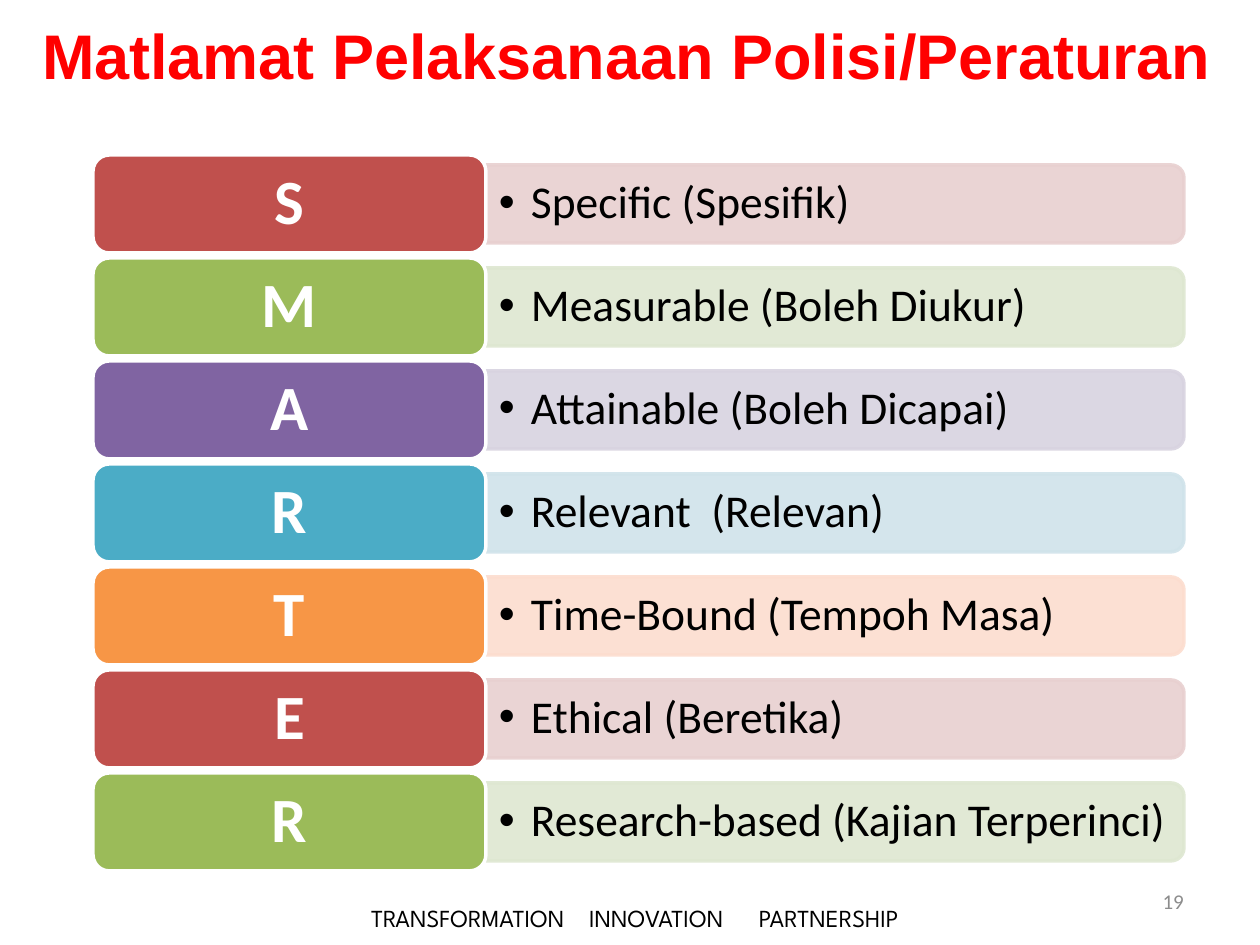
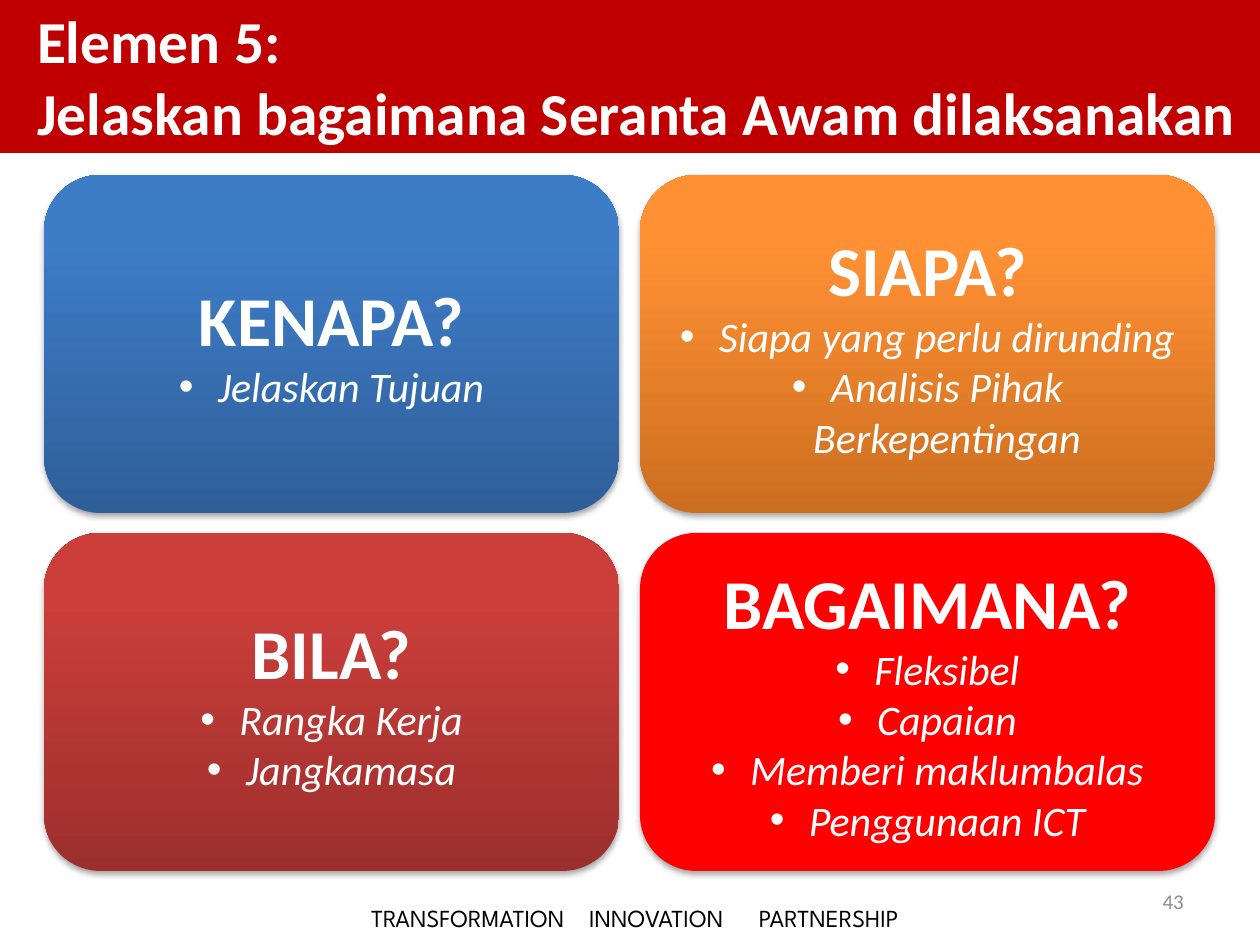
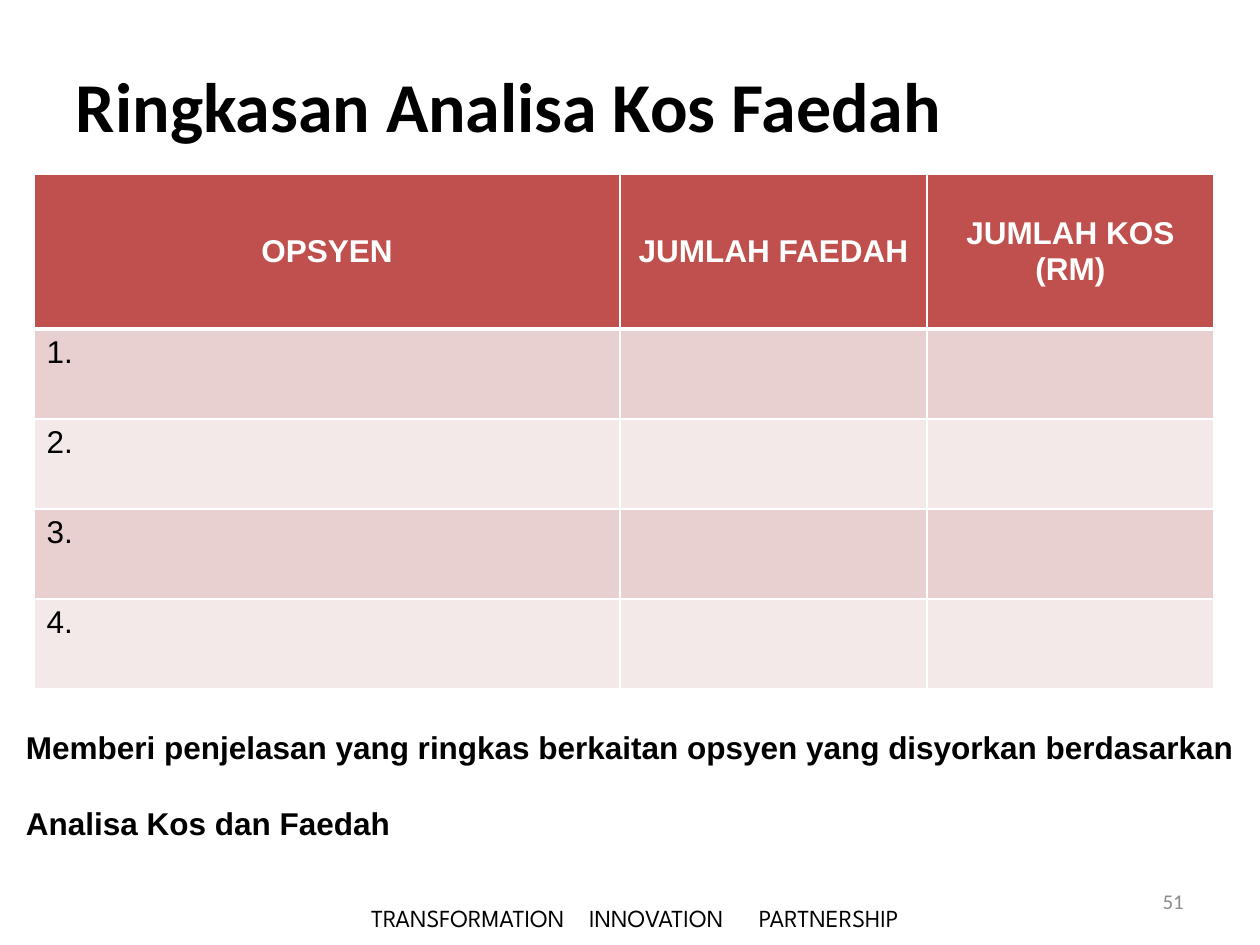
from dataclasses import dataclass

from lxml import etree
from pptx import Presentation
from pptx.dml.color import RGBColor
from pptx.enum import shapes, text
from pptx.oxml import parse_xml
from pptx.oxml.ns import nsdecls, qn
from pptx.util import Emu, Pt

PX = 914400 // 126
TITLE_ONLY = 5
LEFT, CENTER, RIGHT = text.PP_ALIGN.LEFT, text.PP_ALIGN.CENTER, text.PP_ALIGN.RIGHT
TOP, MIDDLE, BOTTOM = (text.MSO_ANCHOR.TOP, text.MSO_ANCHOR.MIDDLE,
                       text.MSO_ANCHOR.BOTTOM)


@dataclass(frozen=True)
class Theme:
    body: str = "Calibri"
    plain: str = "Arial"
    brand: str = "League Spartan"
    black: str = "000000"
    white: str = "FFFFFF"
    gray: str = "8C8C8C"
    red: str = "FF0000"
    band: str = "C00000"
    accents: tuple = ("C0504D", "9BBB59", "8064A2", "4BACC6", "F79646")
    tints: tuple = ("E8D0D0", "DEE7D1", "D8D3E0", "D0E3EA", "FCDDCF")
    table_rows: tuple = ("E8D0D0", "F4E9E9")
    heading: int = 40
    title: int = 36
    band_title: int = 34
    item: int = 26
    card_item: int = 24
    table: int = 18
    footer: int = 14
    number: int = 12


THEME = Theme()

FOOTER = "TRANSFORMATION\tINNOVATION\tPARTNERSHIP"
FOOTER_TABS = (218, 388)

SMART_TITLE = "Matlamat Pelaksanaan Polisi/Peraturan"
SMART = [
    ("S", "Specific (Spesifik)"),
    ("M", "Measurable (Boleh Diukur)"),
    ("A", "Attainable (Boleh Dicapai)"),
    ("R", "Relevant  (Relevan)"),
    ("T", "Time-Bound (Tempoh Masa)"),
    ("E", "Ethical (Beretika)"),
    ("R", "Research-based (Kajian Terperinci)"),
]

CONSULTATION_TITLE = ["Elemen 5:", "Jelaskan bagaimana Seranta Awam dilaksanakan"]
CARDS = [
    ("KENAPA?", ["Jelaskan Tujuan"], ("2F5F99", "3D7CC7")),
    ("SIAPA?", ["Siapa yang perlu dirunding", "Analisis Pihak Berkepentingan"],
     ("CC6E20", "FF9034")),
    ("BILA?", ["Rangka Kerja", "Jangkamasa"], ("9C2F2D", "CB3E3A")),
    ("BAGAIMANA?", ["Fleksibel", "Capaian", "Memberi maklumbalas", "Penggunaan ICT"],
     (THEME.red,)),
]

COST_TITLE = "Ringkasan Analisa Kos Faedah"
COST_HEADER = [["OPSYEN"], ["JUMLAH FAEDAH"], ["JUMLAH KOS", "(RM)"]]
COST_OPTIONS = ["1.", "2.", "3.", "4."]
COST_COLUMNS = (586, 307, 287)
COST_HEADER_HEIGHT, COST_ROW_HEIGHT = 155, 90
COST_NOTE = [
    "Memberi penjelasan yang ringkas berkaitan opsyen yang disyorkan berdasarkan",
    "Analisa Kos dan Faedah",
]


def px(*lengths):
    return [Emu(length * PX) for length in lengths]


def rgb(color):
    return RGBColor.from_string(color)


def write(frame, lines, size, color=THEME.black, font=THEME.body, bold=False,
          italic=False, align=LEFT, spacing=None, gap=0, bullet=0, tabs=()):
    """Append paragraphs; bullet is the hanging indent in px, gap is in points."""
    for line in [lines] if isinstance(lines, str) else lines:
        first = not frame.text
        paragraph = frame.paragraphs[0] if first else frame.add_paragraph()
        properties = paragraph._p.get_or_add_pPr()
        if bullet:
            properties.set("marL", str(bullet * PX))
            properties.set("indent", str(-bullet * PX))
            etree.SubElement(properties, qn("a:buFont"), typeface="Arial")
            etree.SubElement(properties, qn("a:buChar"), char="•")
        if tabs:
            stops = etree.SubElement(properties, qn("a:tabLst"))
            for tab in tabs:
                etree.SubElement(stops, qn("a:tab"), pos=str(tab * PX), algn="l")
        paragraph.alignment = align
        paragraph.space_before = Pt(0 if first else gap)
        if spacing:
            paragraph.line_spacing = spacing
        run = paragraph.add_run()
        run.text = line
        run.font.size, run.font.name = Pt(size), font
        run.font.bold, run.font.italic = bold, italic
        run.font.color.rgb = rgb(color)


def set_frame(frame, anchor=TOP, wrap=True, left=13, right=13):
    frame.word_wrap = wrap
    frame.auto_size = text.MSO_AUTO_SIZE.NONE
    frame.vertical_anchor = anchor
    frame.margin_left, frame.margin_right = px(left, right)
    frame.margin_top, frame.margin_bottom = px(6, 6)


def add_text(slide, box, lines, anchor=TOP, wrap=True, **style):
    frame = slide.shapes.add_textbox(*px(*box)).text_frame
    set_frame(frame, anchor, wrap)
    write(frame, lines, **style)


def add_shape(slide, kind, box, color, line=None):
    shape = slide.shapes.add_shape(kind, *px(*box))
    shape.shadow.inherit = False
    shape.fill.solid()
    shape.fill.fore_color.rgb = rgb(color)
    if line:
        shape.line.color.rgb = rgb(line)
        shape.line.width = Pt(2)
    else:
        shape.line.fill.background()
    set_frame(shape.text_frame, MIDDLE)
    return shape


def set_opacity(shape, percent):
    for color in shape._element.spPr.iter(qn("a:srgbClr")):
        etree.SubElement(color, qn("a:alpha"), val=str(percent * 1000))


def add_drop_shadow(shape):
    shape._element.spPr.find(qn("a:effectLst")).append(parse_xml(
        f'<a:outerShdw {nsdecls("a")} blurRad="{Pt(3.1)}" dist="{Pt(1.8)}" '
        'dir="5400000" rotWithShape="0"><a:srgbClr val="000000">'
        '<a:alpha val="35000"/></a:srgbClr></a:outerShdw>'))


def set_borders(cell, bottom):
    properties = cell._tc.get_or_add_tcPr()
    for side, width in (("L", 1), ("R", 1), ("T", 1), ("B", bottom)):
        properties.append(parse_xml(
            f'<a:ln{side} {nsdecls("a")} w="{Pt(width)}"><a:solidFill>'
            f'<a:srgbClr val="{THEME.white}"/></a:solidFill></a:ln{side}>'))


def start_slide(presentation, number, title, box, anchor, left=13, band=None, **style):
    """Add a slide with its title, footer and page number."""
    slide = presentation.slides.add_slide(presentation.slide_layouts[TITLE_ONLY])
    heading = slide.shapes.title
    heading.left, heading.top, heading.width, heading.height = px(*box)
    if band:
        heading.fill.solid()
        heading.fill.fore_color.rgb = rgb(band)
    set_frame(heading.text_frame, anchor, left=left, right=6)
    write(heading.text_frame, title, bold=True, **style)
    add_text(slide, (358, 897, 640, 43), FOOTER, size=THEME.footer,
             font=THEME.brand, tabs=FOOTER_TABS)
    add_text(slide, (904, 876, 293, 50), str(number), anchor=MIDDLE,
             size=THEME.number, color=THEME.gray, align=RIGHT)
    return slide


def add_smart_slide(presentation):
    slide = start_slide(presentation, 19, SMART_TITLE, (29, 10, 1229, 89), TOP,
                        size=THEME.title, color=THEME.red, font=THEME.plain)
    bar_left, bar_width, bar_height = 486, 698, 78
    for index, (letter, meaning) in enumerate(SMART):
        top = 155 + 103 * index
        accent = THEME.accents[index % len(THEME.accents)]
        tint = THEME.tints[index % len(THEME.tints)]
        # The bar is drawn upright and turned, so its round corners face right.
        shift = (bar_width - bar_height) // 2
        bar = add_shape(slide, shapes.MSO_SHAPE.ROUND_2_SAME_RECTANGLE,
                        (bar_left + shift, top + 10 - shift, bar_height, bar_width),
                        tint, line=tint)
        bar.rotation = 90
        set_opacity(bar, 90)
        add_text(slide, (bar_left, top + 14, bar_width, 70), meaning, anchor=MIDDLE,
                 size=THEME.item, spacing=0.9, bullet=32)
        tile = add_shape(slide, shapes.MSO_SHAPE.ROUNDED_RECTANGLE,
                         (93, top, 393, 98), accent, line=THEME.white)
        write(tile.text_frame, letter, size=THEME.title, color=THEME.white,
              bold=True, align=CENTER, spacing=0.9)


def add_consultation_slide(presentation):
    slide = start_slide(presentation, 43, CONSULTATION_TITLE, (0, 0, 1260, 153),
                        BOTTOM, left=37, band=THEME.band, size=THEME.band_title,
                        color=THEME.white)
    for index, (question, answers, colors) in enumerate(CARDS):
        row, column = divmod(index, 2)
        card = add_shape(slide, shapes.MSO_SHAPE.ROUNDED_RECTANGLE,
                         (44 + 596 * column, 175 + 358 * row, 575, 338), colors[0])
        if len(colors) > 1:
            card.fill.gradient()
            card.fill.gradient_angle = 90
            for stop, color, position in zip(card.fill.gradient_stops, colors, (0, 0.8)):
                stop.color.rgb = rgb(color)
                stop.position = position
        add_drop_shadow(card)
        write(card.text_frame, question, size=THEME.heading, color=THEME.white,
              bold=True, align=CENTER)
        write(card.text_frame, answers, size=THEME.card_item, color=THEME.white,
              italic=True, align=CENTER, bullet=39)


def add_cost_slide(presentation):
    slide = start_slide(presentation, 51, COST_TITLE, (63, 26, 1134, 158), MIDDLE,
                        size=THEME.heading)
    rows = [COST_HEADER] + [[[option], [], []] for option in COST_OPTIONS]
    heights = [COST_HEADER_HEIGHT] + [COST_ROW_HEIGHT] * len(COST_OPTIONS)
    table = slide.shapes.add_table(
        len(rows), len(COST_COLUMNS),
        *px(34, 174, sum(COST_COLUMNS), sum(heights))).table
    for column, width in zip(table.columns, px(*COST_COLUMNS)):
        column.width = width
    for row, height in zip(table.rows, px(*heights)):
        row.height = height
    for row_index, row in enumerate(rows):
        header = row_index == 0
        fill = THEME.accents[0] if header else THEME.table_rows[(row_index - 1) % 2]
        for column_index, lines in enumerate(row):
            cell = table.cell(row_index, column_index)
            set_borders(cell, bottom=3 if header else 1)
            cell.fill.solid()
            cell.fill.fore_color.rgb = rgb(fill)
            cell.vertical_anchor = MIDDLE if header else TOP
            write(cell.text_frame, lines, size=THEME.table, font=THEME.plain,
                  color=THEME.white if header else THEME.black, bold=header,
                  align=CENTER if header else LEFT)
    add_text(slide, (13, 722, 1247, 127), COST_NOTE, wrap=False, size=THEME.table,
             font=THEME.plain, bold=True, gap=22)


def main():
    presentation = Presentation()
    presentation.slide_width, presentation.slide_height = px(1260, 945)
    add_smart_slide(presentation)
    add_consultation_slide(presentation)
    add_cost_slide(presentation)
    presentation.save("out.pptx")


if __name__ == "__main__":
    main()
